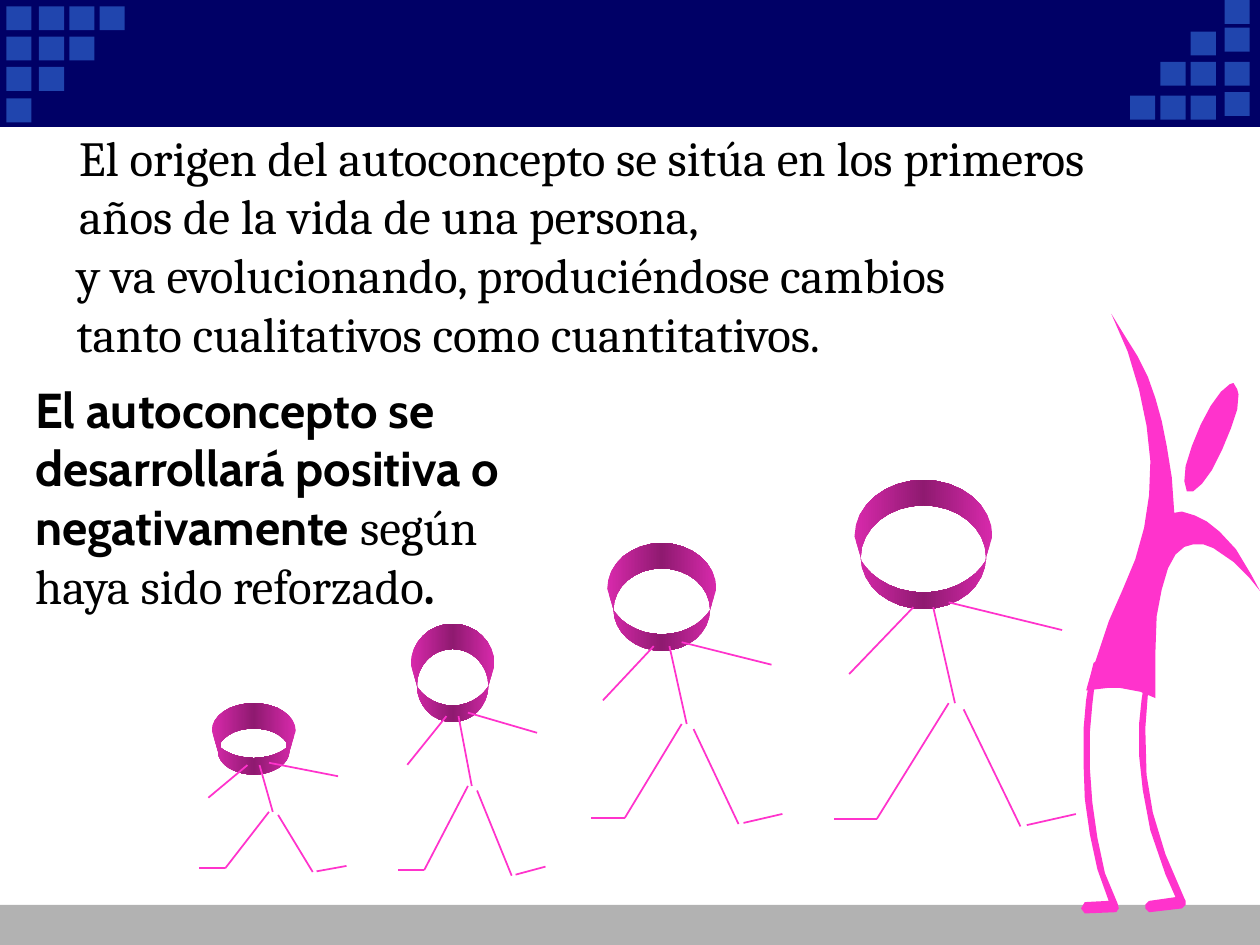
"""Build a slide on how self-concept grows, with a row of growing figures."""
from copy import deepcopy
from dataclasses import dataclass
from math import cos, pi, sin, sqrt

from lxml import etree
from pptx import Presentation
from pptx import util as u
from pptx.dml.color import RGBColor
from pptx.enum import shapes, text
from pptx.oxml import ns


@dataclass(frozen=True)
class Theme:
    navy: str = "000066"
    square: str = "2045AE"
    floor: str = "B2B2B2"
    pink: str = "FF33CC"
    ring_edge: str = "D829AC"
    ring_middle: str = "8F1A70"
    white: str = "FFFFFF"
    black: str = "000000"
    serif: str = "Cambria"
    sans: str = "Cabin"
    body_size: float = 28
    limb_width: float = 1


@dataclass(frozen=True)
class Box:
    left: float
    top: float
    width: float
    height: float

    def lengths(self) -> tuple:
        return tuple(u.Pt(value) for value in (self.left, self.top, self.width, self.height))

    def point(self, x: float, y: float) -> tuple:
        return self.left + self.width * x / 100, self.top + self.height * y / 100


@dataclass(frozen=True)
class Run:
    text: str
    font: str
    bold: bool = False


THEME = Theme()
FIGURES = (
    Box(337.7, 310.3, 109.4, 160.6),
    Box(113.8, 401.8, 84.2, 96.5),
    Box(476.6, 274.3, 138.2, 198),
    Box(227.5, 356.4, 84.2, 144),
)
LIMBS = (
    ((41, 36.7), (50, 64.4)),
    ((47.4, 35.3), (94.3, 43.3)),
    ((32.8, 36.7), (6.25, 56)),
    ((47.4, 64.4), (17.7, 97.8)),
    ((53.6, 66.2), (77.1, 100)),
    ((79.7, 99.6), (100, 96.4)),
    ((17.7, 97.8), (0, 97.8)),
)
LEFT_COLUMNS = (3.6, 22.3, 39.6, 56.9)
LEFT_ROWS = (3.6, 20.9, 38.2, 56.2)
RIGHT_COLUMNS = (699.8, 680.4, 663.1, 645.8)
RIGHT_ROWS = (54.7, 35.3, 18, 0)
EDGE_ROWS = (52.6, 35.3, 15.8, 0)
TORSO = (
    (891, 468), (901, 444), (908, 419), (912, 393), (913, 366), (910, 338), (904, 309),
    (895, 279), (882, 249), (893, 267), (903, 283), (911, 299), (917, 316), (922, 334),
    (926, 354), (930, 379), (932, 407), (938, 406), (948, 409), (958, 414), (968, 422),
    (981, 436), (993, 456), (1000, 469), (992, 459), (979, 446), (963, 435), (955, 432),
    (947, 432), (940, 434), (933, 440), (927, 451), (922, 468), (918, 489), (917, 518),
    (917, 554), (905, 549), (889, 546), (879, 546), (862, 548), (864, 541), (871, 520),
    (880, 493),
)
FACE = (
    (970, 357), (962, 373), (954, 384), (947, 390), (942, 390), (940, 382), (941, 370),
    (946, 354), (953, 337), (961, 322), (969, 311), (976, 305), (979, 304), (982, 309),
    (983, 313), (982, 325), (977, 340),
)
RIGHT_LEG = (
    (940, 713), (925, 678), (915, 645), (910, 615), (909, 578), (911, 552), (914, 538),
    (915, 535), (913, 532), (910, 534), (908, 542), (906, 556), (904, 575), (904, 599),
    (907, 627), (913, 659), (925, 694), (933, 712), (912, 715), (909, 718), (909, 721),
    (912, 724), (938, 721), (941, 718), (941, 715),
)
LEFT_LEG = (
    (872, 532), (873, 529), (870, 525), (868, 526), (865, 538), (862, 556), (860, 579),
    (860, 605), (861, 634), (865, 662), (871, 690), (880, 715), (861, 716), (858, 721),
    (861, 725), (886, 724), (888, 721), (887, 717), (877, 693), (871, 665), (867, 637),
    (865, 609), (865, 582), (867, 559), (869, 542),
)


def paint(shape, color: str, line: str = "") -> None:
    """Give a shape a flat fill and an optional outline."""
    shape.shadow.inherit = False
    shape.fill.solid()
    shape.fill.fore_color.rgb = RGBColor.from_string(color)
    shape.line.fill.background()
    if line:
        shape.line.color.rgb = RGBColor.from_string(line)
        shape.line.width = u.Pt(0.75)


def add_block(slide, box: Box, color: str, line: str = "") -> None:
    """Draw a flat rectangle."""
    paint(slide.shapes.add_shape(shapes.MSO_SHAPE.RECTANGLE, *box.lengths()), color, line)


def add_outline(slide, *contours: tuple, color: str, scale: float):
    """Draw closed contours as one shape; scale is the points per coordinate unit."""
    builder = slide.shapes.build_freeform(*contours[0][0], scale=u.Pt(scale))
    builder.add_line_segments(contours[0][1:], close=True)
    for contour in contours[1:]:
        builder.move_to(*contour[0])
        builder.add_line_segments(contour[1:], close=True)
    shape = builder.convert_to_shape()
    paint(shape, color)
    return shape


def add_text(slide, box: Box, runs: tuple, *, size: float = THEME.body_size,
             color: str = THEME.black, fill: str = "") -> None:
    """Write one wrapped paragraph of formatted runs."""
    shape = slide.shapes.add_textbox(*box.lengths())
    if fill:
        paint(shape, fill)
    frame = shape.text_frame
    frame.word_wrap = True
    frame.vertical_anchor = text.MSO_ANCHOR.TOP
    for item in runs:
        run = frame.paragraphs[0].add_run()
        run.text = item.text
        run.font.name = item.font
        run.font.bold = item.bold
        run.font.size = u.Pt(size)
        run.font.color.rgb = RGBColor.from_string(color)


def shade_ring(shape) -> None:
    """Shade a ring darker along its middle."""
    shape.fill.gradient()
    shape.fill.gradient_angle = 0
    stops = shape._element.spPr.find(".//" + ns.qn("a:gsLst"))
    stops.insert(1, deepcopy(stops[0]))
    colors = (THEME.ring_edge, THEME.ring_middle, THEME.ring_edge)
    for stop, color, position in zip(shape.fill.gradient_stops, colors, (0, 0.5, 1)):
        stop.color.rgb = RGBColor.from_string(color)
        stop.position = position


def add_head(slide, rim: Box) -> None:
    """Draw a ring spanning a rim and a lower base, open where the two overlap."""
    base = Box(rim.left + 3.6, rim.top + 14.4, rim.width - 7.2, rim.height - 5)
    outer, upper, lower = [], [], []
    for side, oval in ((-1, rim), (1, base)):
        for step in range(17):
            angle = pi * step / 16
            outer.append(oval.point(50 + 50 * side * cos(angle), 50 + 50 * side * sin(angle)))
    for step in range(17):
        x, base_y = base.point(50 - 50 * cos(pi * step / 16), 50 - 50 * sin(pi * step / 16))
        reach = (x - rim.left) / rim.width * 2 - 1
        rim_y = rim.top + rim.height / 2 * (1 + sqrt(1 - reach ** 2))
        if base_y < rim_y:
            upper.append((x, base_y))
            lower.append((x, rim_y))
    contours = [[(x * 10, y * 10) for x, y in points] for points in (outer, lower + upper[::-1])]
    shade_ring(add_outline(slide, *contours, color=THEME.ring_edge, scale=0.1))


def add_figure(slide, box: Box) -> None:
    """Draw a stick figure scaled to its box."""
    add_head(slide, Box(*box.point(8.5, 0), box.width * 0.57, box.height * 0.325))
    for start, end in LIMBS:
        ends = [u.Pt(value) for value in box.point(*start) + box.point(*end)]
        limb = slide.shapes.add_connector(shapes.MSO_CONNECTOR.STRAIGHT, *ends)
        limb.line.color.rgb = RGBColor.from_string(THEME.pink)
        limb.line.width = u.Pt(THEME.limb_width)
        etree.SubElement(limb._element.spPr, ns.qn("a:effectLst"))


def add_banner(slide) -> None:
    """Draw the floor, the top band and its corner squares."""
    add_block(slide, Box(0, 517, 720, 23), THEME.floor)
    add_block(slide, Box(0, 0, 720, 72), THEME.navy, THEME.navy)
    for row in range(4):
        for column in range(4 - row):
            right_rows = RIGHT_ROWS if column else EDGE_ROWS
            for left, top in ((LEFT_COLUMNS[column], LEFT_ROWS[row]),
                              (RIGHT_COLUMNS[column], right_rows[row])):
                add_block(slide, Box(left, top, 14.4, 13.7), THEME.square)


def main() -> None:
    """Build and save the presentation."""
    presentation = Presentation()
    presentation.slide_width, presentation.slide_height = u.Pt(720), u.Pt(540)
    slide = presentation.slides.add_slide(presentation.slide_layouts[6])
    add_banner(slide)
    add_text(slide, Box(38.2, 69.1, 612, 74.2), (Run(
        "El origen del autoconcepto se sitúa en los primeros años de la vida de una persona,",
        THEME.serif),))
    add_text(slide, Box(36.7, 136.1, 553, 108), (Run(
        "y va evolucionando, produciéndose cambios tanto cualitativos como cuantitativos.",
        THEME.serif),))
    for box in FIGURES:
        add_figure(slide, box)
    for points in (TORSO, FACE, RIGHT_LEG, LEFT_LEG):
        add_outline(slide, points, color=THEME.pink, scale=0.72)
    add_text(slide, Box(13, 213.1, 281.5, 143.3), (
        Run("El autoconcepto se desarrollará positiva o negativamente ", THEME.sans, True),
        Run("según haya sido reforzado", THEME.serif),
        Run(".", THEME.serif, True)), fill=THEME.white)
    presentation.save("out.pptx")


if __name__ == "__main__":
    main()
